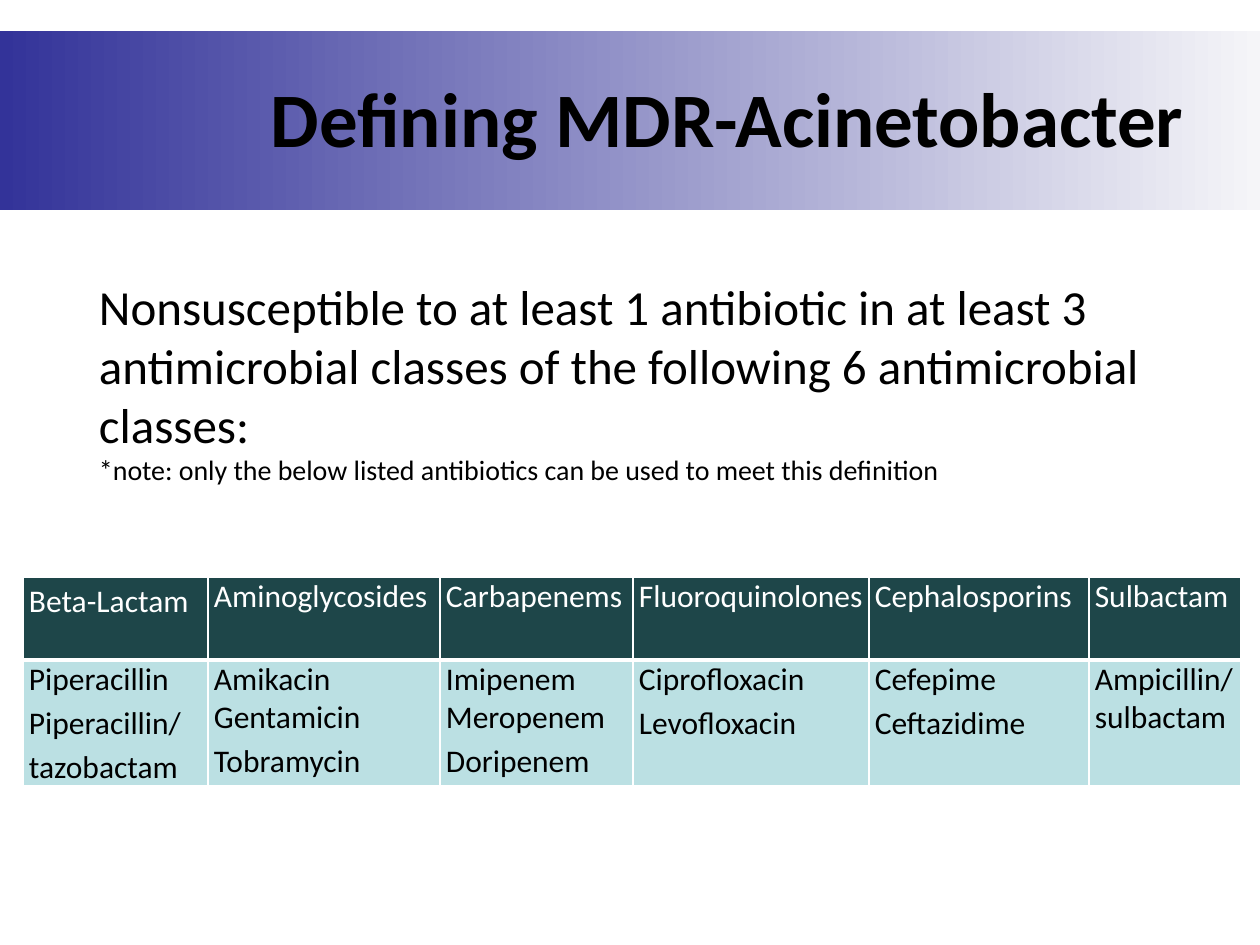
from dataclasses import dataclass
from lxml.etree import SubElement as Sub
from pptx import Presentation as Deck
from pptx.dml.color import RGBColor as Color
from pptx.enum.shapes import MSO_SHAPE as Kind
from pptx.enum.text import MSO_ANCHOR as Anchor, PP_ALIGN as Align
from pptx.oxml.ns import qn
from pptx.util import Emu, Pt

WIDE, HIGH = 1260, 945


def px(num):
    return Emu(round(num * 914400 / 126))


def rgb(code):
    return Color.from_string(code)


@dataclass(frozen=True)
class Theme:
    font: str = "Calibri"
    ink: str = "000000"
    white: str = "FFFFFF"
    deep: str = "333399"
    pale: str = "F5F5F8"
    head: str = "1E4649"
    cell: str = "BBE0E3"
    title: int = 44
    lead: int = 28
    grid: int = 18
    note: int = 16
    loose: float = 1.15
    thin: int = 1
    thick: int = 3


class Page:
    def __init__(self, deck, theme):
        self.theme = theme
        self.slide = deck.slides.add_slide(deck.slide_layouts[6])

    def band(self, x, y, w, h):
        bar = self.slide.shapes.add_shape(Kind.RECTANGLE, px(x), px(y), px(w), px(h))
        bar.shadow.inherit = False
        bar.line.fill.background()
        bar.fill.gradient()
        bar.fill.gradient_angle = 0
        for stop, tone, place in zip(
            bar.fill.gradient_stops, (self.theme.deep, self.theme.pale), (0, 1)
        ):
            stop.color.rgb = rgb(tone)
            stop.position = place

    def run(self, para, text, size, tone, bold=False):
        run = para.add_run()
        run.text = text
        run.font.name = self.theme.font
        run.font.size = Pt(size)
        run.font.bold = bold
        run.font.color.rgb = rgb(tone)

    def lines(self, frame, items, tone, bold=False, align=Align.LEFT):
        for num, (text, size, gap) in enumerate(items):
            para = frame.add_paragraph() if num else frame.paragraphs[0]
            para.alignment = align
            para.line_spacing = gap
            self.run(para, text, size, tone, bold)

    def text(self, x, y, w, h, items, inset=13, bold=False, align=Align.LEFT):
        box = self.slide.shapes.add_textbox(px(x), px(y), px(w), px(h))
        frame = box.text_frame
        frame.word_wrap = True
        frame.vertical_anchor = Anchor.MIDDLE
        frame.margin_left = px(inset)
        self.lines(frame, items, self.theme.ink, bold, align)

    def edge(self, cell, side, width):
        line = Sub(cell._tc.get_or_add_tcPr(), qn(f"a:ln{side}"), w=str(Pt(width)))
        fill = Sub(line, qn("a:solidFill"))
        Sub(fill, qn("a:srgbClr"), val=self.theme.white)

    def fill(self, cell, items, tone, back, top, base):
        cell.margin_left, cell.margin_right = px(6), px(1)
        cell.margin_top = cell.margin_bottom = 0
        thin = self.theme.thin
        for side, width in zip("LRTB", (thin, thin, top, base)):
            self.edge(cell, side, width)
        cell.fill.solid()
        cell.fill.fore_color.rgb = rgb(back)
        self.lines(cell.text_frame, items, tone)

    def table(self, x, y, cols, rows, data):
        look = self.theme
        grid = self.slide.shapes.add_table(
            len(rows), len(cols), px(x), px(y), px(sum(cols)), px(sum(rows))
        ).table
        grid.first_row = grid.horz_banding = False
        for row, high in zip(grid.rows, rows):
            row.height = px(high)
        for num, (wide, (name, drugs)) in enumerate(zip(cols, data)):
            grid.columns[num].width = px(wide)
            first = [(name, look.grid, 1.0 if num else look.loose)]
            last = len(drugs) - 1
            rest = [
                (drug, look.grid, look.loose if 0 < at == last else 1.0)
                for at, drug in enumerate(drugs)
            ]
            self.fill(grid.cell(0, num), first, look.white, look.head,
                      look.thin, look.thick)
            self.fill(grid.cell(1, num), rest, look.ink, look.cell,
                      look.thick, look.thin)


def main():
    deck = Deck()
    deck.slide_width, deck.slide_height = px(WIDE), px(HIGH)
    look = Theme()
    page = Page(deck, look)
    page.band(0, 31, WIDE, 179)
    page.text(210, 38, 987, 158, [("Defining MDR-Acinetobacter", look.title, 1.0)],
              bold=True, align=Align.RIGHT)
    page.table(23, 577, (185, 232, 193, 236, 220, 152), (83, 126), (
        ("Beta-Lactam", ("Piperacillin", "Piperacillin/ tazobactam")),
        ("Aminoglycosides", ("Amikacin", "Gentamicin", "Tobramycin")),
        ("Carbapenems", ("Imipenem", "Meropenem", "Doripenem")),
        ("Fluoroquinolones", ("Ciprofloxacin", "Levofloxacin")),
        ("Cephalosporins", ("Cefepime", "Ceftazidime")),
        ("Sulbactam", ("Ampicillin/ sulbactam",)),
    ))
    page.text(23, 267, 1171, 229, [
        ("Nonsusceptible to at least 1 antibiotic in at least 3 antimicrobial "
         "classes of the following 6 antimicrobial classes:", look.lead, 1.0),
        ("*note: only the below listed antibiotics can be used to meet this "
         "definition", look.note, 1.0),
    ], inset=76)
    deck.save("out.pptx")


if __name__ == "__main__":
    main()
